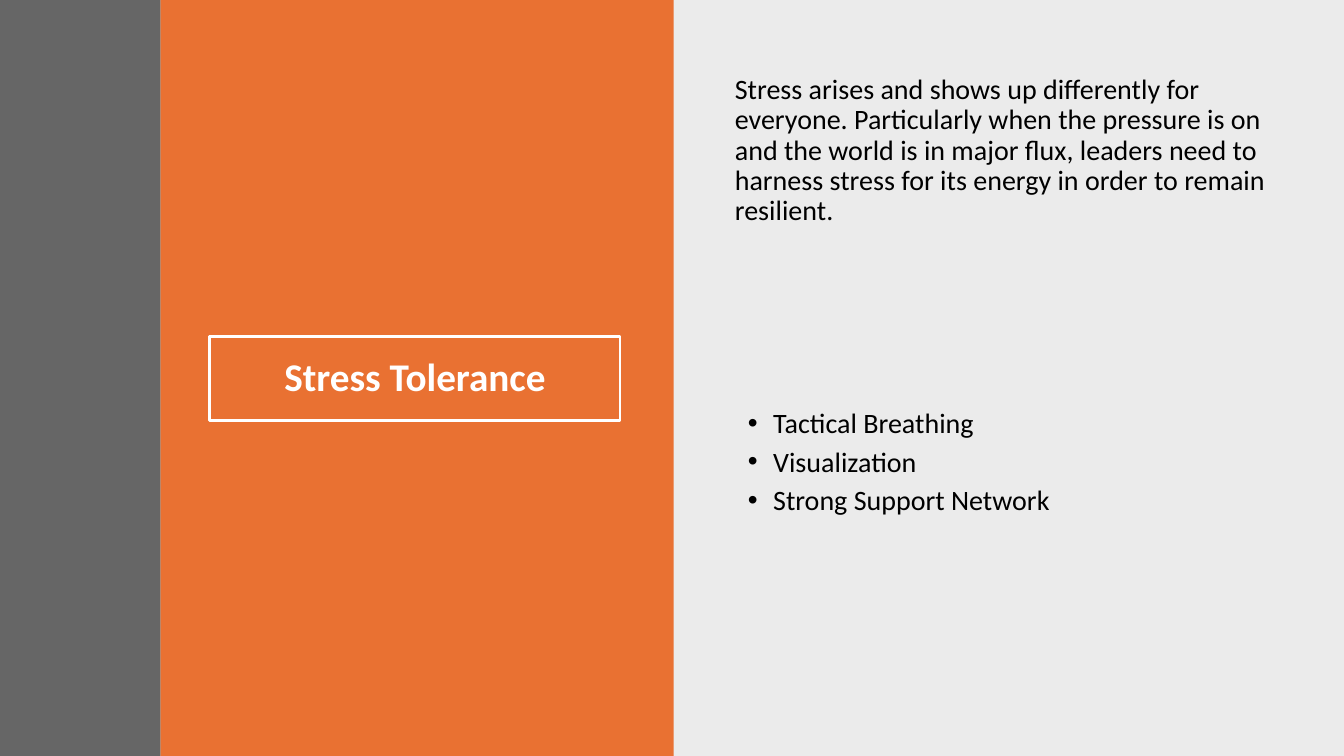
"""Build the Stress Tolerance slide: colour panels, a framed title and body text."""
from dataclasses import dataclass

from lxml.etree import SubElement
from pptx import Presentation
from pptx.dml.color import RGBColor
from pptx.enum.shapes import MSO_SHAPE
from pptx.enum.text import MSO_ANCHOR, PP_ALIGN
from pptx.oxml.ns import qn
from pptx.util import Inches, Pt

TITLE = "Stress Tolerance"
INTRO = ("Stress arises and shows up differently for everyone. Particularly when the "
         "pressure is on and the world is in major flux, leaders need to harness stress "
         "for its energy in order to remain resilient.")
TECHNIQUES = ["Tactical Breathing", "Visualization", "Strong Support Network"]


@dataclass(frozen=True)
class Theme:
    font: str = "Calibri"
    text: str = "000000"
    title: str = "FFFFFF"
    accent: str = "E97132"
    strip: str = "404040"
    title_size: int = 28
    body_size: int = 20
    line_spacing: float = 0.9


THEME = Theme()
WIDTH, HEIGHT = 13.33, 7.5
PANELS = [
    (6.67, WIDTH, THEME.text, 8),
    (1.59, 6.68, THEME.accent, 100),
    (0, 1.59, THEME.strip, 80),
]
TITLE_BOX = (2.08, 3.34, 4.07, 0.83)
BODY_LEFT, BODY_WIDTH, BODY_HEIGHT = 7.19, 5.53, 2.79
INTRO_TOP, LIST_TOP = 0.7, 4.01


def add_panel(slide, left, right, color, opacity):
    sp = slide.shapes.add_shape(MSO_SHAPE.RECTANGLE, Inches(left), 0,
                                Inches(right - left), Inches(HEIGHT))
    sp.shadow.inherit = False
    sp.line.fill.background()
    sp.fill.solid()
    sp.fill.fore_color.rgb = RGBColor.from_string(color)
    if opacity < 100:
        clr = sp.fill._xPr.find(qn("a:solidFill"))[0]
        SubElement(clr, qn("a:alpha"), val=str(opacity * 1000))


def style(p, size, color, bold=False):
    p.line_spacing = THEME.line_spacing
    for r in p.runs:
        r.font.name = THEME.font
        r.font.size = Pt(size)
        r.font.bold = bold
        r.font.color.rgb = RGBColor.from_string(color)


def add_title(slide):
    sp = slide.shapes.add_shape(MSO_SHAPE.RECTANGLE, *map(Inches, TITLE_BOX))
    sp.shadow.inherit = False
    sp.fill.background()
    sp.line.color.rgb = RGBColor.from_string(THEME.title)
    sp.line.width = Pt(2)
    tf = sp.text_frame
    tf.text = TITLE
    tf.vertical_anchor = MSO_ANCHOR.MIDDLE
    p = tf.paragraphs[0]
    p.alignment = PP_ALIGN.CENTER
    style(p, THEME.title_size, THEME.title, bold=True)


def add_body(slide, top, lines):
    tb = slide.shapes.add_textbox(Inches(BODY_LEFT), Inches(top),
                                  Inches(BODY_WIDTH), Inches(BODY_HEIGHT))
    tf = tb.text_frame
    tf.word_wrap = True
    tf.text = "\n".join(lines)
    for p in tf.paragraphs:
        style(p, THEME.body_size, THEME.text)
    return tf.paragraphs


def add_bullet(p):
    p.space_after = Pt(6)
    pPr = p._p.get_or_add_pPr()
    pPr.set("marL", str(Inches(0.38)))
    pPr.set("indent", str(Inches(-0.25)))
    SubElement(pPr, qn("a:buFont"), typeface="Arial")
    SubElement(pPr, qn("a:buChar"), char="•")


def main():
    prs = Presentation()
    prs.slide_width, prs.slide_height = Inches(WIDTH), Inches(HEIGHT)
    slide = prs.slides.add_slide(prs.slide_layouts[6])
    for panel in PANELS:
        add_panel(slide, *panel)
    add_title(slide)
    for p in add_body(slide, INTRO_TOP, [INTRO]):
        p.space_before = Pt(10)
    for p in add_body(slide, LIST_TOP, TECHNIQUES):
        add_bullet(p)
    prs.save("out.pptx")


if __name__ == "__main__":
    main()
